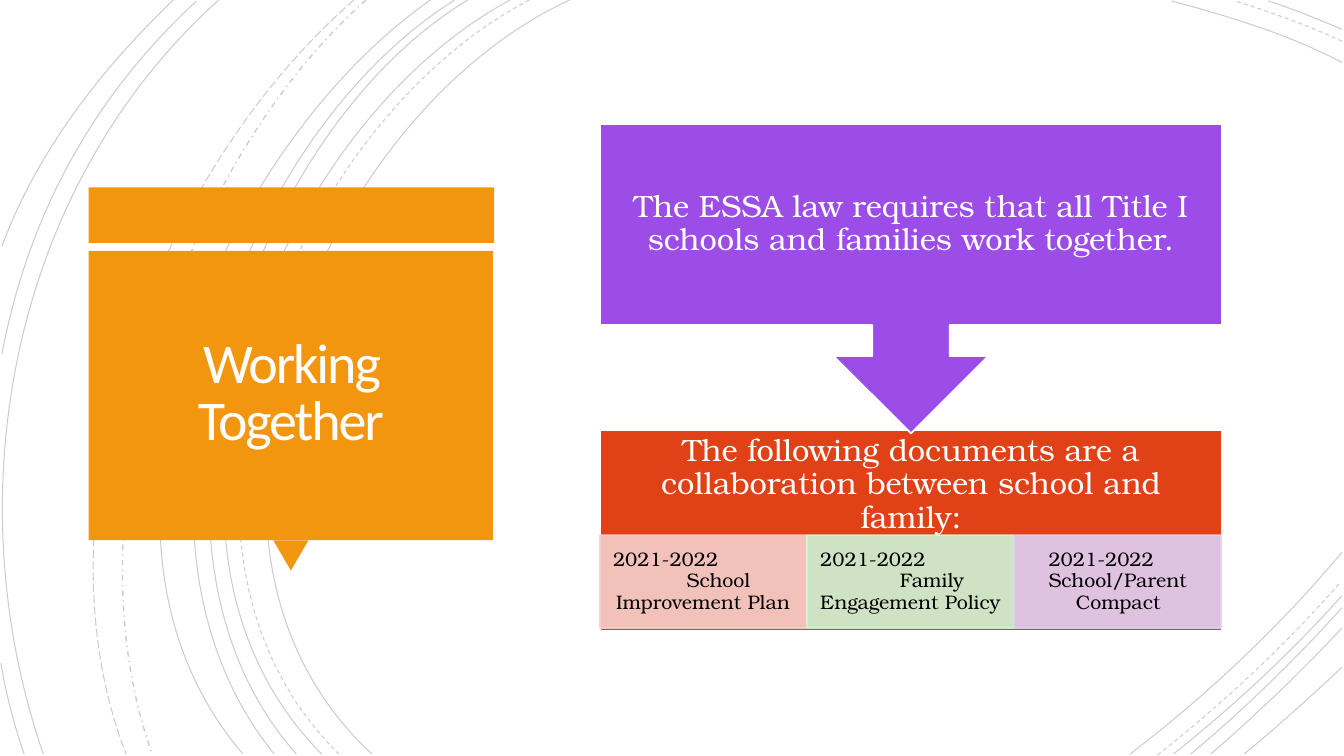
from lxml import etree
from pptx import Presentation
from pptx import util as u
from pptx.dml.color import RGBColor
from pptx.enum import dml, shapes, text
from pptx.oxml import ns

ORANGE, RED, PURPLE, WHITE, BLACK = "F3960F", "E04116", "9D4DE7", "FFFFFF", "000000"
SERIF = "TeX Gyre Bonum"
DASH = dml.MSO_LINE
RECT = shapes.MSO_SHAPE.RECTANGLE


def paint(fill, color, opacity=100):
    fill.solid()
    fill.fore_color.rgb = RGBColor.from_string(color)
    if opacity < 100:
        for node in fill._xPr.iter(ns.qn("a:srgbClr")):
            etree.SubElement(node, ns.qn("a:alpha"), val=str(opacity * 1000))


def write(frame, lines, margins, size, color, font, spacing, align):
    frame.word_wrap = True
    frame.auto_size = text.MSO_AUTO_SIZE.NONE
    frame.vertical_anchor = text.MSO_ANCHOR.MIDDLE
    for side, margin in zip(("left", "top", "right", "bottom"), margins):
        setattr(frame, f"margin_{side}", u.Inches(margin))
    for index, (line, indent) in enumerate(lines):
        paragraph = frame.add_paragraph() if index else frame.paragraphs[0]
        for name, value in {"alignment": align, "line_spacing": spacing,
                            "space_before": u.Pt(0), "space_after": u.Pt(0)}.items():
            setattr(paragraph, name, value)
        if indent:
            paragraph._p.get_or_add_pPr().set("marL", str(u.Inches(indent)))
        run = paragraph.add_run()
        run.text = line
        run.font.name = font
        run.font.size = u.Pt(size)
        run.font.color.rgb = RGBColor.from_string(color)


deck = Presentation()
deck.slide_width, deck.slide_height = u.Inches(13.33), u.Inches(7.5)
slide = deck.slides.add_slide(deck.slide_layouts[5])
canvas = slide.shapes

arcs = [
    (5.65, 0, 3.15, 1.15, 1.43, 5.4, 3.69, 7.48),
    (13.31, 0.62, 12.78, 0.34, 12.18, 0.16, 11.62, 0.01),
    (11.21, 7.48, 11.97, 6.9, 12.69, 6.22, 13.31, 5.48),
    (5.25, 0, 2.85, 1.25, 1.23, 5.37, 3.36, 7.48),
    (13.31, 0.41, 12.97, 0.25, 12.6, 0.12, 12.25, 0.01),
    (11.48, 7.49, 12.13, 6.98, 12.75, 6.4, 13.3, 5.77),
    (5.06, 0, 2.7, 1.27, 1.1, 5.37, 3.19, 7.48),
    (13.31, 0.29, 13.07, 0.19, 12.83, 0.09, 12.58, 0.01),
    (11.64, 7.48, 12.23, 7.01, 12.8, 6.48, 13.31, 5.91),
    (4.64, 0, 2.44, 1.33, 1.1, 5.41, 2.94, 7.48),
    (11.81, 7.48, 12.34, 7.04, 12.84, 6.55, 13.31, 6.03),
    (4.51, 0, 2.31, 1.38, 0.97, 5.33, 2.72, 7.48),
    (12.01, 7.48, 12.46, 7.09, 12.9, 6.67, 13.31, 6.23),
    (4.27, 0, 2.17, 1.47, 0.53, 5.29, 2.41, 7.48),
    (12.34, 7.48, 12.67, 7.21, 12.99, 6.92, 13.31, 6.62),
    (3.63, 0, 1.76, 1.66, 0.65, 5.09, 1.51, 7.48),
    (3.51, 0, 1.57, 1.69, 0.29, 4.99, 1.25, 7.48),
    (2.17, 0, 0.11, 1.85, -0.46, 4.9, 0.43, 7.48),
    (1.95, 0.01, 0.92, 0.96, 0.28, 2.14, 0.02, 3.51),
    (0.01, 6.58, 0.06, 6.89, 0.14, 7.19, 0.24, 7.48),
    (1.72, 0, 1, 0.69, 0.37, 1.5, 0.02, 2.44),
]
dashes = {3: DASH.DASH, 4: DASH.DASH, 5: DASH.DASH, 15: DASH.DASH_DOT, 16: DASH.LONG_DASH}
for index, arc in enumerate(arcs):
    start, *controls = [(u.Inches(x), u.Inches(y)) for x, y in zip(arc[::2], arc[1::2])]
    builder = canvas.build_freeform(*start)
    builder.add_line_segments(controls, close=False)
    curve = builder.convert_to_shape()
    segments = list(curve._element.iter(ns.qn("a:lnTo")))
    bezier = etree.SubElement(segments[0].getparent(), ns.qn("a:cubicBezTo"))
    for segment in segments:
        bezier.append(segment[0])
        segment.getparent().remove(segment)
    curve.shadow.inherit = False
    curve.fill.background()
    paint(curve.line.fill, BLACK, 20)
    curve.line.width = u.Pt(1 if index == 15 else 0.75)
    curve.line.dash_style = dashes.get(index, DASH.SOLID)

for kind, box, turn in [
    (RECT, (0.88, 1.86, 4.02, 0.55), 0),
    (shapes.MSO_SHAPE.ISOSCELES_TRIANGLE, (2.71, 5.36, 0.35, 0.3), 180),
    (RECT, (0.88, 2.49, 4.01, 2.87), 0),
]:
    panel = canvas.add_shape(kind, *map(u.Inches, box))
    panel.rotation = turn
    panel.shadow.inherit = False
    paint(panel.fill, ORANGE)
    panel.line.fill.background()

title = canvas.title
for name, value in {"left": 0.97, "top": 2.57, "width": 3.83, "height": 2.69}.items():
    setattr(title, name, u.Inches(value))
write(title.text_frame, [("Working Together", 0)], [0.25] * 4, 40, "FFFEFF", "Calibri", 0.85,
      text.PP_ALIGN.CENTER)
title.text_frame.paragraphs[0].runs[0]._r.get_or_add_rPr().set("spc", "-150")
canvas._spTree.append(title._element)

steps = [
    (RECT, 4.27, 1.99, 0, RED, 1.08,
     "The following documents are a collaboration between school and family:"),
    (shapes.MSO_SHAPE.UP_ARROW_CALLOUT, 1.23, 3.07, 180, PURPLE, 1.99,
     "The ESSA law requires that all Title I schools and families work together."),
]
for kind, top, height, turn, color, text_height, wording in steps:
    step = canvas.add_shape(kind, *map(u.Inches, (5.95, top, 6.17, height)))
    step.rotation = turn
    step.shadow.inherit = False
    paint(step.fill, color)
    paint(step.line.fill, WHITE)
    step.line.width = u.Pt(1.25)
    caption = canvas.add_textbox(*map(u.Inches, (5.95, top, 6.17, text_height)))
    write(caption.text_frame, [(wording, 0)], [0.17] * 4, 22, WHITE, SERIF, 0.9,
          text.PP_ALIGN.CENTER)

documents = [
    ("F3CFCC", [("2021-2022", 0.02), ("School", 0.75), ("Improvement Plan", 0.05)]),
    ("CEF5D7", [("2021-2022", 0.02), ("Family", 0.81), ("Engagement Policy", 0.02)]),
    ("DFD0F6", [("2021-2022", 0.23), ("School/Parent", 0.23), ("Compact", 0.5)]),
]
for column, (color, lines) in enumerate(documents):
    document = canvas.add_shape(RECT, *map(u.Inches, (5.95 + column * 2.055, 5.31, 2.05, 0.92)))
    document.shadow.inherit = False
    paint(document.fill, color, 90)
    paint(document.line.fill, color, 90)
    document.line.width = u.Pt(1.25)
    write(document.text_frame, lines, (0.11, 0.02, 0, 0.02), 14, BLACK, SERIF, 0.9,
          text.PP_ALIGN.LEFT)

deck.save("out.pptx")
